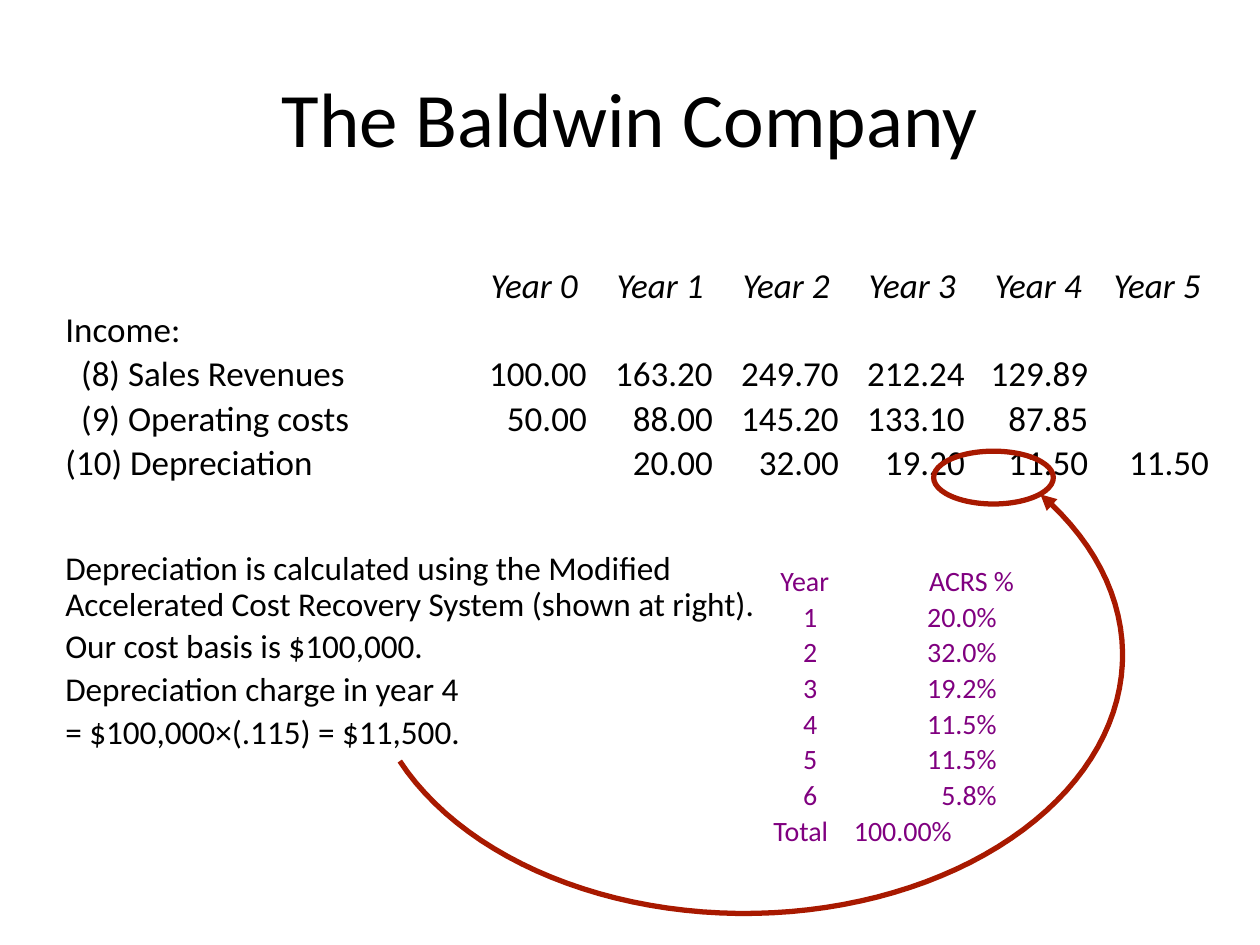
import math

import pptx
import pptx.dml.color
import pptx.enum.shapes
import pptx.enum.text
import pptx.oxml
import pptx.oxml.ns
import pptx.util

Pt = pptx.util.Pt
RGB = pptx.dml.color.RGBColor.from_string
SHAPE = pptx.enum.shapes.MSO_SHAPE
ALIGN = pptx.enum.text.PP_ALIGN
ANCHOR = pptx.enum.text.MSO_ANCHOR
NS = pptx.oxml.ns.nsdecls("a")
PLAIN_TABLE = "{2D5ABB26-0587-4C30-8999-92F81FD0307C}"

# Content
TITLE = "The Baldwin Company"
YEARS = ["Year 0", "Year 1", "Year 2", "Year 3", "Year 4", "Year 5"]
INCOME = [
    # label, left margin, amounts by year
    ("Income:", 0, [""] * 6),
    ("(8) Sales Revenues", 9, ["100.00", "163.20", "249.70", "212.24", "129.89", ""]),
    ("(9) Operating costs", 9, ["50.00", "88.00", "145.20", "133.10", "87.85", ""]),
    ("(10) Depreciation", 0, ["", "20.00", "32.00", "19.20", "11.50", "11.50"]),
]
NOTES = [
    "Depreciation is calculated using the Modified Accelerated Cost Recovery System (shown at right).",
    "Our cost basis is $100,000.",
    "Depreciation charge in year 4",
    "= $100,000×(.115) = $11,500.",
]
ACRS_HEAD = ("Year", "ACRS %")
ACRS = [("1", "20.0%"), ("2", "32.0%"), ("3", "19.2%"),
        ("4", "11.5%"), ("5", "11.5%"), ("6", "5.8%")]
ACRS_TOTAL = ("Total", "100.00%")

THEME = {
    "font": "Calibri", "ink": "000000", "paper": "FFFFFF",
    "acrs": "800080", "mark": "A81900", "mark_width": 3,
    "title": 44, "income": 20, "notes": 19, "rates": 16,
}


def add_run(p, text, size, color=THEME["ink"], italic=False):
    r = p.add_run()
    r.text = text
    r.font.name = THEME["font"]
    r.font.size = Pt(size)
    r.font.italic = italic
    r.font.color.rgb = RGB(color)


def add_plain_table(slide, left, top, widths, row_height, rows):
    """Add a table without style or fill, and return it."""
    frame = slide.shapes.add_table(rows, len(widths), Pt(left), Pt(top),
                                   Pt(sum(widths)), Pt(row_height * rows))
    table = frame.table
    table.first_row = table.horz_banding = False
    style = table._tbl.tblPr.find(pptx.oxml.ns.qn("a:tableStyleId"))
    style.text = PLAIN_TABLE
    for column, width in zip(table.columns, widths):
        column.width = Pt(width)
    for row in table.rows:
        row.height = Pt(row_height)
    return table


def fill_cell(cell, text, size, align=ALIGN.LEFT, left=0, right=0, **look):
    cell.fill.background()
    cell.vertical_anchor = ANCHOR.TOP
    cell.margin_left, cell.margin_right = Pt(left), Pt(right)
    cell.margin_top = cell.margin_bottom = 0
    cell.text_frame.word_wrap = True
    p = cell.text_frame.paragraphs[0]
    p.alignment = align
    if text:
        add_run(p, text, size, **look)
    else:
        # An empty cell keeps the type size, so the row keeps its height
        p._p.append(pptx.oxml.parse_xml('<a:endParaRPr %s sz="%d"/>' % (NS, size * 100)))


def style_mark(sp):
    sp.shadow.inherit = False
    sp.fill.background()
    sp.line.color.rgb = RGB(THEME["mark"])
    sp.line.width = Pt(THEME["mark_width"])


prs = pptx.Presentation()
prs.slide_width, prs.slide_height = Pt(720), Pt(540)
s = prs.slides.add_slide(prs.slide_layouts[6])
s.background.fill.solid()
s.background.fill.fore_color.rgb = RGB(THEME["paper"])

# Title
sp = s.shapes.add_shape(SHAPE.RECTANGLE, Pt(36), Pt(21.6), Pt(648), Pt(90))
sp.shadow.inherit = False
sp.fill.solid()
sp.fill.fore_color.rgb = RGB(THEME["paper"])
sp.line.fill.background()
tf = sp.text_frame
tf.word_wrap = True
tf.vertical_anchor = ANCHOR.MIDDLE
tf.paragraphs[0].alignment = ALIGN.CENTER
add_run(tf.paragraphs[0], TITLE, THEME["title"])

# Income by year: amounts end at the column edges, years start inside them
INCOME_LEFT, LABEL_WIDTH = 37.4, 226
YEAR_WIDTHS = [72, 72, 72, 72, 70.5, 69]
YEAR_INDENTS = [17, 17, 17, 17, 17, 14.5]
table = add_plain_table(s, INCOME_LEFT, 151.4, [LABEL_WIDTH] + YEAR_WIDTHS,
                        25.3, len(INCOME) + 1)
size = THEME["income"]
fill_cell(table.cell(0, 0), "", size)
for col, (year, indent) in enumerate(zip(YEARS, YEAR_INDENTS), 1):
    fill_cell(table.cell(0, col), year, size, left=indent, italic=True)
for row, (label, indent, amounts) in enumerate(INCOME, 1):
    fill_cell(table.cell(row, 0), label, size, left=indent)
    for col, amount in enumerate(amounts, 1):
        fill_cell(table.cell(row, col), amount, size, ALIGN.RIGHT)

# How depreciation is worked out
tf = s.shapes.add_textbox(Pt(30.24), Pt(311.76), Pt(408.24), Pt(168.48)).text_frame
tf.word_wrap = True
for i, note in enumerate(NOTES):
    p = tf.add_paragraph() if i else tf.paragraphs[0]
    p.line_spacing = 0.9
    p.space_before = Pt(3.8)
    add_run(p, note, THEME["notes"])

# ACRS rates: each kind of row has its own margins
HEAD_LOOK = ({"left": 14}, {"left": 43})
RATE_LOOK = ({"left": 27}, {"align": ALIGN.RIGHT, "right": 12.5})
TOTAL_LOOK = ({"left": 10}, {"left": 0})
rates = [(ACRS_HEAD, HEAD_LOOK)]
rates += [(pair, RATE_LOOK) for pair in ACRS]
rates += [(ACRS_TOTAL, TOTAL_LOOK)]
table = add_plain_table(s, 432, 322.8, [56, 94], 20.4, len(rates))
for row, (texts, looks) in enumerate(rates):
    for col, (text, look) in enumerate(zip(texts, looks)):
        fill_cell(table.cell(row, col), text, THEME["rates"], color=THEME["acrs"], **look)

# Ring around the year 4 charge
ring = s.shapes.add_shape(SHAPE.OVAL, Pt(533.5), Pt(257.8), Pt(68.4), Pt(30.2))
style_mark(ring)

# Curved arrow from the calculation to the ring: part of an ellipse
CENTER_X, CENTER_Y, RADIUS_X, RADIUS_Y = 425.5, 374.4, 216, 147.6
START, END, STEPS = 155.8, -38.5, 72
points = []
for i in range(STEPS + 1):
    angle = math.radians(START + (END - START) * i / STEPS)
    points.append((Pt(CENTER_X + RADIUS_X * math.cos(angle)),
                   Pt(CENTER_Y + RADIUS_Y * math.sin(angle))))
builder = s.shapes.build_freeform(*points[0])
builder.add_line_segments(points[1:], close=False)
arrow = builder.convert_to_shape()
style_mark(arrow)
ln = arrow.line._get_or_add_ln()
ln.append(pptx.oxml.parse_xml('<a:tailEnd %s type="triangle"/>' % NS))

prs.save("out.pptx")
